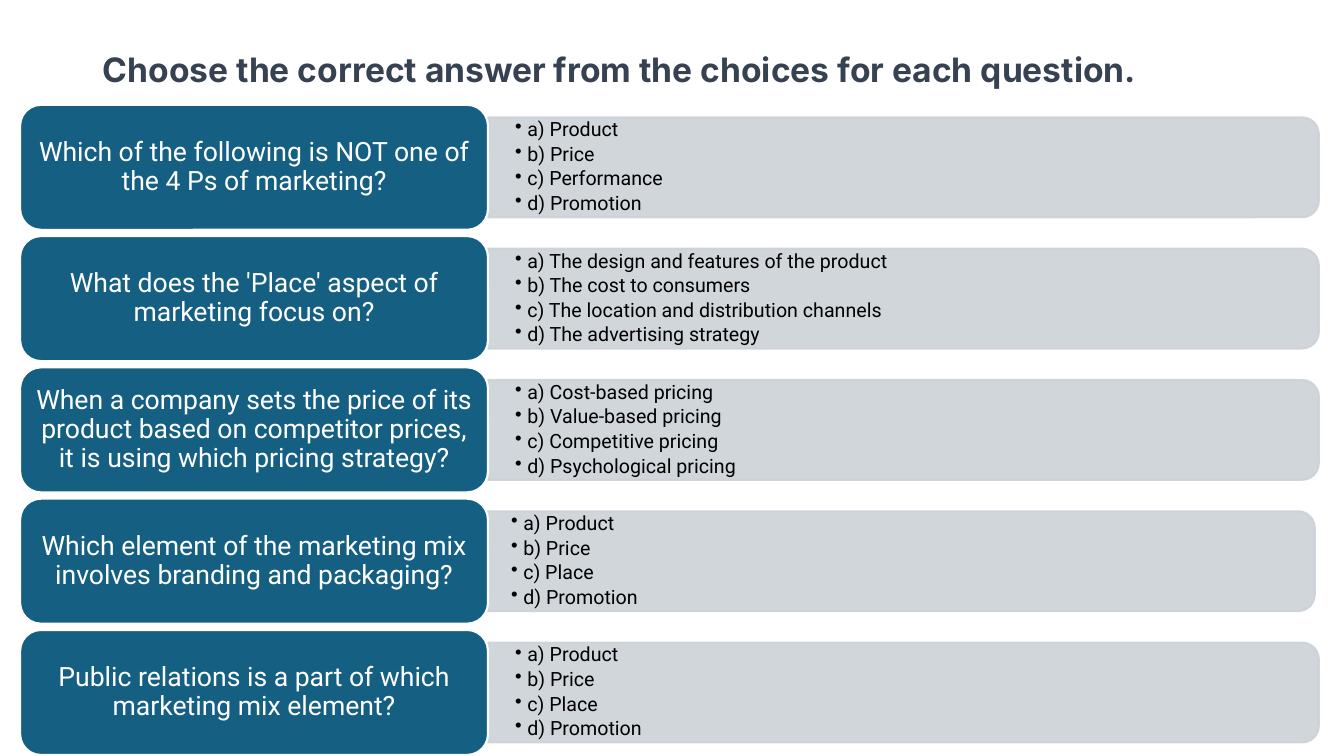
from dataclasses import dataclass

from lxml.etree import SubElement
from pptx import Presentation
from pptx.dml.color import RGBColor
from pptx.enum.shapes import MSO_SHAPE
from pptx.enum.text import MSO_ANCHOR, MSO_AUTO_SIZE, PP_ALIGN
from pptx.oxml.ns import qn
from pptx.util import Inches, Pt


@dataclass
class Theme:
    heading: str = "Inter"
    body: str = "Roboto"
    ink: str = "364152"
    card: str = "156082"
    panel: str = "CCD2D8"
    white: str = "FFFFFF"
    black: str = "000000"
    title_size: int = 24
    question_size: int = 19
    answer_size: int = 14


theme = Theme()


def write(tf, *lines, font=theme.body, size, color, bold=False,
          align=PP_ALIGN.LEFT, inset=(0.1, 0.05), after=0, bullet=None):
    tf.word_wrap = True
    tf.auto_size = MSO_AUTO_SIZE.NONE
    tf.vertical_anchor = MSO_ANCHOR.MIDDLE
    tf.margin_left = tf.margin_right = Inches(inset[0])
    tf.margin_top = tf.margin_bottom = Inches(inset[1])
    for i, line in enumerate(lines):
        p = tf.add_paragraph() if i else tf.paragraphs[0]
        p.alignment = align
        p.line_spacing = 0.9
        p.space_after = Pt(after)
        if bullet:
            pPr = p._p.get_or_add_pPr()
            pPr.set("marL", str(Inches(0.12)))
            pPr.set("indent", str(-Inches(0.12)))
            SubElement(pPr, qn("a:buChar")).set("char", bullet)
        r = p.add_run()
        r.text = line
        r.font.name = font
        r.font.size = Pt(size)
        r.font.bold = bold
        r.font.color.rgb = RGBColor.from_string(color)


def add_box(kind, left, top, width, height, fill, line, opacity=100):
    sp = s.shapes.add_shape(kind, Inches(left), Inches(top), Inches(width), Inches(height))
    sp.shadow.inherit = False
    sp.fill.solid()
    sp.fill.fore_color.rgb = RGBColor.from_string(fill)
    sp.line.color.rgb = RGBColor.from_string(line)
    sp.line.width = Pt(1.5)
    if opacity < 100:
        for clr in sp._element.spPr.iter(qn("a:srgbClr")):
            SubElement(clr, qn("a:alpha")).set("val", str(opacity * 1000))
    return sp


quiz = [
    ("Which of the following is NOT one of the 4 Ps of marketing?",
     ["a) Product", "b) Price", "c) Performance", "d) Promotion"], 0),
    ("What does the 'Place' aspect of marketing focus on?",
     ["a) The design and features of the product", "b) The cost to consumers",
      "c) The location and distribution channels", "d) The advertising strategy"], 0),
    ("When a company sets the price of its product based on competitor prices, "
     "it is using which pricing strategy?",
     ["a) Cost-based pricing", "b) Value-based pricing",
      "c) Competitive pricing", "d) Psychological pricing"], 0),
    ("Which element of the marketing mix involves branding and packaging?",
     ["a) Product", "b) Price", "c) Place", "d) Promotion"], -0.04),
    ("Public relations is a part of which marketing mix element?",
     ["a) Product", "b) Price", "c) Place", "d) Promotion"], 0),
]

prs = Presentation()
prs.slide_width, prs.slide_height = Inches(13.33), Inches(7.5)
s = prs.slides.add_slide(prs.slide_layouts[5])

title = s.shapes.title
title.left, title.top = Inches(0.92), Inches(0.4)
title.width, title.height = Inches(11.5), Inches(0.63)
write(title.text_frame, "Choose the correct answer from the choices for each question.",
      font=theme.heading, size=theme.title_size, color=theme.ink, bold=True)

left, first_top, last_top = 0.2, 1.04, 6.25
card_w, card_h = 4.64, 1.24
panel_w, panel_h = 8.24, 0.99
text_w, text_h = 8.2, 0.9
row_step = (last_top - first_top) / (len(quiz) - 1)

for row, (question, answers, shift) in enumerate(quiz):
    top = first_top + row * row_step
    middle = top + card_h / 2
    panel_left = left + card_w + shift

    panel = add_box(MSO_SHAPE.ROUND_2_SAME_RECTANGLE,
                    panel_left + (panel_w - panel_h) / 2, middle - panel_w / 2,
                    panel_h, panel_w, theme.panel, theme.panel, opacity=90)
    panel.rotation = 90

    choices = s.shapes.add_textbox(Inches(panel_left), Inches(middle - text_h / 2),
                                   Inches(text_w), Inches(text_h))
    write(choices.text_frame, *answers, size=theme.answer_size, color=theme.black,
          inset=(0.27, 0.14), after=2.4, bullet="•")

    card = add_box(MSO_SHAPE.ROUNDED_RECTANGLE, left, top, card_w, card_h,
                   theme.card, theme.white)
    write(card.text_frame, question, size=theme.question_size, color=theme.white,
          align=PP_ALIGN.CENTER, inset=(0.08, 0.04))

prs.save("out.pptx")
